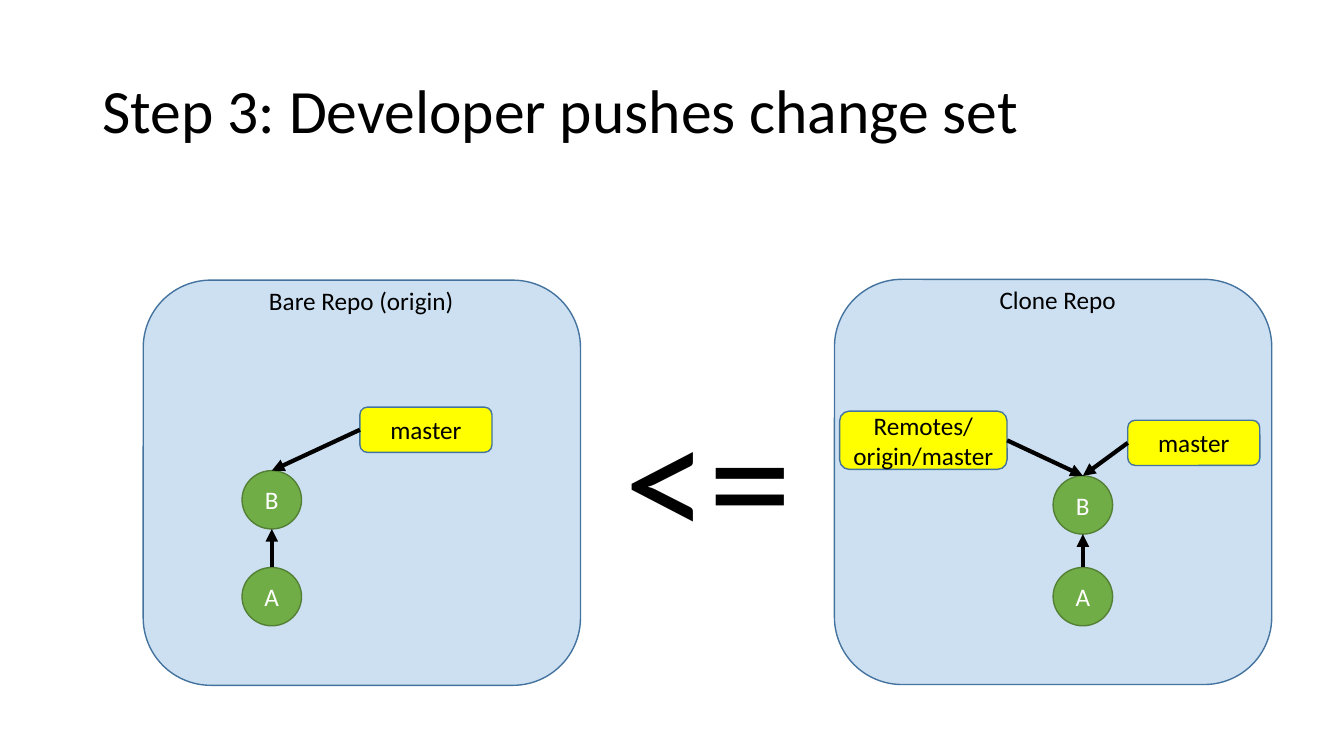
"""Build a slide showing a developer pushing a change set to the origin."""
from lxml.etree import SubElement
from pptx import Presentation
from pptx.dml.color import RGBColor
from pptx.enum.shapes import MSO_CONNECTOR as Connector, MSO_SHAPE as Preset
from pptx.enum.text import MSO_ANCHOR as Anchor, PP_ALIGN as Align
from pptx.oxml.ns import qn
from pptx.util import Cm, Pt

COLORS = {
    "repo": "5B9BD5",
    "edge": "43739E",
    "commit": "70AD47",
    "commit_edge": "538035",
    "branch": "FFFF00",
    "black": "000000",
    "white": "FFFFFF",
}
FONT = "Calibri"
TOP, LEFT, RIGHT = 0, 1, 3
COMMIT_WIDTH, COMMIT_HEIGHT = 1.5, 1.47


def color(name):
    return RGBColor.from_string(COLORS[name])


def write(shape, text, size=18, ink="black", align=Align.CENTER):
    frame = shape.text_frame
    frame.text = text
    for paragraph in frame.paragraphs:
        paragraph.alignment = align
        for run in paragraph.runs:
            run.font.name = FONT
            run.font.size = Pt(size)
            run.font.color.rgb = color(ink)
    return frame


def add_text(slide, text, left, top, width, height, size=18):
    box = slide.shapes.add_textbox(Cm(left), Cm(top), Cm(width), Cm(height))
    return write(box, text, size, align=Align.LEFT)


def add_title(slide, text):
    frame = add_text(slide, text, 2.33, 1.01, 29.21, 3.68, size=44)
    frame.word_wrap = True
    frame.vertical_anchor = Anchor.MIDDLE
    frame.paragraphs[0].line_spacing = 0.9


def add_box(slide, preset, left, top, width, height, fill, edge="edge"):
    shape = slide.shapes.add_shape(preset, Cm(left), Cm(top), Cm(width), Cm(height))
    shape.shadow.inherit = False
    shape.fill.solid()
    shape.fill.fore_color.rgb = color(fill)
    shape.line.color.rgb = color(edge)
    shape.line.width = Pt(1)
    shape.text_frame.vertical_anchor = Anchor.MIDDLE
    return shape


def add_repo(slide, name, left, top, name_left, name_width):
    panel = add_box(slide, Preset.ROUNDED_RECTANGLE, left, top, 11.02, 10.21, "repo")
    tint = panel.fill._xPr.find(qn("a:solidFill"))[0]
    SubElement(tint, qn("a:alpha"), val="30000")
    add_text(slide, name, name_left, top, name_width, 1.02)


def add_branch(slide, name, left, top, width=3.33, height=1.14):
    branch = add_box(slide, Preset.ROUNDED_RECTANGLE, left, top, width, height, "branch")
    write(branch, name)
    return branch


def add_commit(slide, name, left, top):
    commit = add_box(slide, Preset.OVAL, left, top, COMMIT_WIDTH, COMMIT_HEIGHT,
                     "commit", "commit_edge")
    write(commit, name, ink="white")
    return commit


def add_arrow(slide, start, start_site, end, end_site=None):
    """Join start to end; with no end site, stop at the bottom of end."""
    middle, bottom = end.left + end.width // 2, end.top + end.height
    arrow = slide.shapes.add_connector(Connector.STRAIGHT, middle, bottom, middle, bottom)
    arrow.begin_connect(start, start_site)
    if end_site is not None:
        arrow.end_connect(end, end_site)
    arrow.line.color.rgb = color("black")
    arrow.line.width = Pt(3)
    SubElement(arrow.line._get_or_add_ln(), qn("a:tailEnd"), type="triangle")
    SubElement(arrow._element.spPr, qn("a:effectLst"))


def add_history(slide, left, top_of_b):
    first = add_commit(slide, "A", left, 14.3)
    second = add_commit(slide, "B", left, top_of_b)
    add_arrow(slide, first, TOP, second)
    return second


def main():
    presentation = Presentation()
    presentation.slide_width, presentation.slide_height = Cm(33.87), Cm(19.05)
    slide = presentation.slides.add_slide(presentation.slide_layouts[6])

    add_title(slide, "Step 3: Developer pushes change set")

    add_repo(slide, "Bare Repo (origin)", 3.61, 7.06, 6.53, 5.21)
    origin_head = add_history(slide, 6.1, 11.86)
    origin_master = add_branch(slide, "master", 9.07, 10.26)
    add_arrow(slide, origin_master, LEFT, origin_head, TOP)

    add_repo(slide, "Clone Repo", 21.03, 7.04, 24.94, 3.48)
    clone_head = add_history(slide, 26.54, 11.99)
    clone_master = add_branch(slide, "master", 28.42, 10.59)
    remote_master = add_branch(slide, "Remotes/\norigin/master", 21.16, 10.36, 4.22, 1.47)
    add_arrow(slide, clone_master, LEFT, clone_head, TOP)
    add_arrow(slide, remote_master, RIGHT, clone_head, TOP)

    add_text(slide, "<=", 15.49, 9.27, 4.78, 5.38, size=120)
    presentation.save("out.pptx")


if __name__ == "__main__":
    main()
